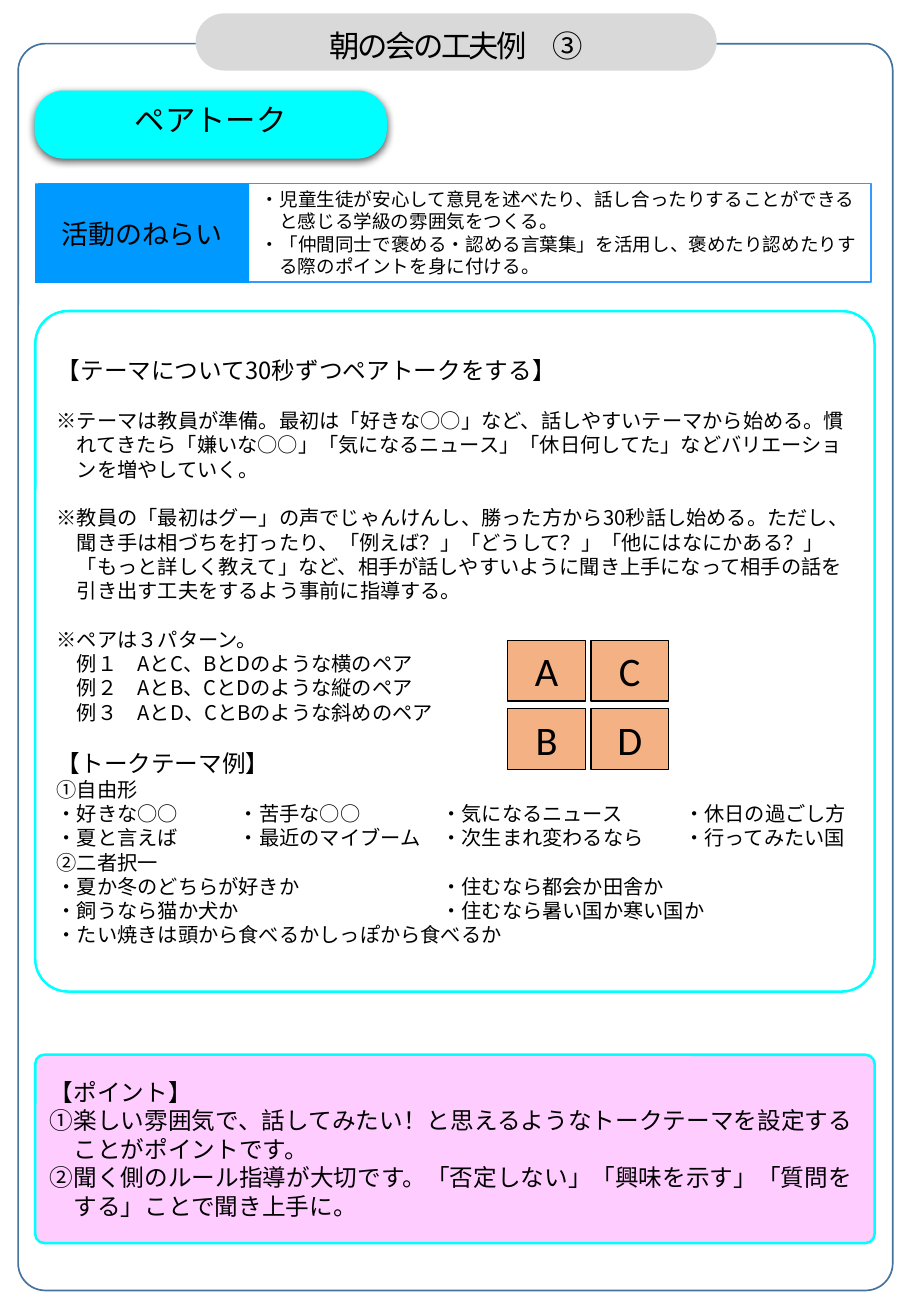
import pptx
import pptx.dml.color
import pptx.enum.shapes
import pptx.enum.text
import pptx.oxml
import pptx.util
from lxml import etree

GOTHIC = "Noto Sans CJK JP"
LATIN = "Calibri"
INK = "000000"
CYAN = "00FFFF"
LINE_RATIO = 1.2   # line height as a multiple of the text size
TAB_COLUMNS = (9, 19, 31)   # theme columns, in characters

# Paragraphs: size, lines left blank above, hanging characters, text
ACTIVITY = [
    (14, 0, 0, "【テーマについて30秒ずつペアトークをする】"),
    (12, 1, 1, "※テーマは教員が準備。最初は「好きな○○」など、話しやすいテーマから始める。慣\v"
               "れてきたら「嫌いな○○」「気になるニュース」「休日何してた」などバリエーショ\v"
               "ンを増やしていく。"),
    (12, 1, 1, "※教員の「最初はグー」の声でじゃんけんし、勝った方から30秒話し始める。ただし、\v"
               "聞き手は相づちを打ったり、「例えば？」「どうして？」「他にはなにかある？」\v"
               "「もっと詳しく教えて」など、相手が話しやすいように聞き上手になって相手の話を\v"
               "引き出す工夫をするよう事前に指導する。"),
    (12, 1, 1, "※ペアは３パターン。\v"
               "例１　AとC、BとDのような横のペア\v"
               "例２　AとB、CとDのような縦のペア\v"
               "例３　AとD、CとBのような斜めのペア"),
    (14, 1, 0, "【トークテーマ例】"),
    (12, 0, 0, "①自由形"),
    (12, 0, 0, "・好きな○○\t・苦手な○○\t・気になるニュース\t・休日の過ごし方"),
    (12, 0, 0, "・夏と言えば\t・最近のマイブーム\t・次生まれ変わるなら\t・行ってみたい国"),
    (12, 0, 0, "②二者択一"),
    (12, 0, 0, "・夏か冬のどちらが好きか\t・住むなら都会か田舎か"),
    (12, 0, 0, "・飼うなら猫か犬か\t・住むなら暑い国か寒い国か"),
    (12, 0, 0, "・たい焼きは頭から食べるかしっぽから食べるか"),
]
POINTS = [
    (14, 0, 0, "【ポイント】"),
    (14, 0, 1, "①楽しい雰囲気で、話してみたい！と思えるようなトークテーマを設定する\v"
               "ことがポイントです。"),
    (14, 0, 1, "②聞く側のルール指導が大切です。「否定しない」「興味を示す」「質問を\v"
               "する」ことで聞き上手に。"),
]
AIMS = [
    (11, 0, 1, "・児童生徒が安心して意見を述べたり、話し合ったりすることができる\v"
               "と感じる学級の雰囲気をつくる。"),
    (11, 0, 1, "・「仲間同士で褒める・認める言葉集」を活用し、褒めたり認めたりす\v"
               "る際のポイントを身に付ける。"),
]
TITLE = [(18, 0, 0, "朝の会の工夫例　③")]
AIM_LABEL = [(16, 0, 0, "活動のねらい")]
PAIR_TALK = [(18, 0, 0, "ペアトーク")]
SEATS = [["A", "C"], ["B", "D"]]

# Boxes are left, top, width, height in percent of the slide
LEFT, WIDTH = 3.87, 92.13
AIM_TOP, AIM_HEIGHT = 13.94, 7.48
PANELS = [
    dict(box=(LEFT, 23.64, WIDTH, 51.71), corner=0.048, fill="FFFFFF", line=(CYAN, 1.5),
         text=ACTIVITY),
    dict(box=(2, 3.32, 96, 94.74), corner=0.031, line=("43739E", 1)),
    dict(box=(LEFT, 80.15, WIDTH, 14.31), corner=0.048, fill="FFCCFF", line=(CYAN, 1.5),
         text=POINTS),
    dict(box=(27.33, AIM_TOP, 68.8, AIM_HEIGHT), text=AIMS),
    dict(box=(4.27, AIM_TOP, 91.33, AIM_HEIGHT), line=("3399FF", 1)),
    dict(box=(21.47, 1.02, 57.2, 4.34), corner=0.5, fill="D9D9D9", text=TITLE,
         style=dict(centred=True, spacing=LINE_RATIO, tracking=-150)),
    dict(box=(LEFT, AIM_TOP, 23.47, 7.57), fill="0099FF", text=AIM_LABEL,
         style=dict(centred=True, font=LATIN)),
    dict(box=(LEFT, 6.93, 38.53, 5.08), corner=0.427, fill=CYAN, line=(CYAN, 0.75),
         shadow=True, text=PAIR_TALK,
         style=dict(centred=True, spacing=pptx.util.Pt(15))),
]
SEAT_ORIGIN, SEAT_SIZE, SEAT_STEP = (55.73, 48.66), (8.53, 4.62), (9.13, 5.17)

SHADOW = """<a:effectLst xmlns:a="http://schemas.openxmlformats.org/drawingml/2006/main">
<a:outerShdw blurRad="57150" dist="19050" dir="5400000" algn="ctr" rotWithShape="0">
<a:srgbClr val="000000"><a:alpha val="63000"/></a:srgbClr></a:outerShdw></a:effectLst>"""

presentation = pptx.Presentation()
presentation.slide_width = pptx.util.Inches(7.5)
presentation.slide_height = pptx.util.Inches(10.83)
slide = presentation.slides.add_slide(presentation.slide_layouts[6])


def colour(value):
    return pptx.dml.color.RGBColor.from_string(value)


def set_attributes(target, values):
    for name, value in values.items():
        setattr(target, name, value)


def add_child(parent, tag, **attributes):
    child = etree.SubElement(parent, pptx.oxml.ns.qn(tag))
    for name, value in attributes.items():
        child.set(name, str(value))
    return child


def write(frame, paragraphs, centred=False, font=GOTHIC, spacing=None, tracking=0):
    set_attributes(frame, dict(word_wrap=True,
                               vertical_anchor=pptx.enum.text.MSO_ANCHOR.MIDDLE))
    alignment = pptx.enum.text.PP_ALIGN.CENTER if centred else pptx.enum.text.PP_ALIGN.LEFT
    for index, (size, blank_lines, hanging, text) in enumerate(paragraphs):
        paragraph = frame.add_paragraph() if index else frame.paragraphs[0]
        line_height = pptx.util.Pt(size * LINE_RATIO)
        # Tabs stay real tab characters; \v becomes a line break
        paragraph.text = text
        set_attributes(paragraph, dict(
            alignment=alignment, line_spacing=spacing or line_height,
            space_before=pptx.util.Pt(12 * LINE_RATIO * blank_lines)))
        properties = paragraph._p.get_or_add_pPr()
        em = pptx.util.Pt(size)
        if hanging:
            properties.set("marL", str(em * hanging))
            properties.set("indent", str(-em * hanging))
        if "\t" in text:
            tabs = add_child(properties, "a:tabLst")
            for column in TAB_COLUMNS:
                add_child(tabs, "a:tab", pos=em * column, algn="l")
        for run in paragraph.runs:
            set_attributes(run.font, dict(size=em, name=font))
            run.font.color.rgb = colour(INK)
            add_child(run._r.get_or_add_rPr(), "a:ea", typeface=GOTHIC)
            if tracking:
                run._r.get_or_add_rPr().set("spc", str(tracking))


def add_panel(box, corner=None, fill=None, line=None, shadow=False, text=(), style=None):
    extents = (presentation.slide_width, presentation.slide_height) * 2
    place = [round(share * extent / 100) for share, extent in zip(box, extents)]
    if not fill and not line:
        shape = slide.shapes.add_textbox(*place)
    else:
        kinds = pptx.enum.shapes.MSO_SHAPE
        shape = slide.shapes.add_shape(kinds.ROUNDED_RECTANGLE if corner else kinds.RECTANGLE,
                                       *place)
        if corner:
            shape.adjustments[0] = corner
        if fill:
            shape.fill.solid()
            shape.fill.fore_color.rgb = colour(fill)
        else:
            shape.fill.background()
        if line:
            shape.line.color.rgb = colour(line[0])
            shape.line.width = pptx.util.Pt(line[1])
        else:
            shape.line.fill.background()
        if shadow:
            shape._element.spPr.append(pptx.oxml.parse_xml(SHADOW))
        else:
            shape.shadow.inherit = False
    if text:
        write(shape.text_frame, text, **(style or {}))


for panel in PANELS:
    add_panel(**panel)

for row, letters in enumerate(SEATS):
    for column, letter in enumerate(letters):
        corner_point = [start + step * count for start, step, count
                        in zip(SEAT_ORIGIN, SEAT_STEP, (column, row))]
        add_panel((*corner_point, *SEAT_SIZE), fill="F4B183", line=(INK, 0.75),
                  text=[(24, 0, 0, letter)], style=dict(centred=True, font=LATIN))

presentation.save("out.pptx")
